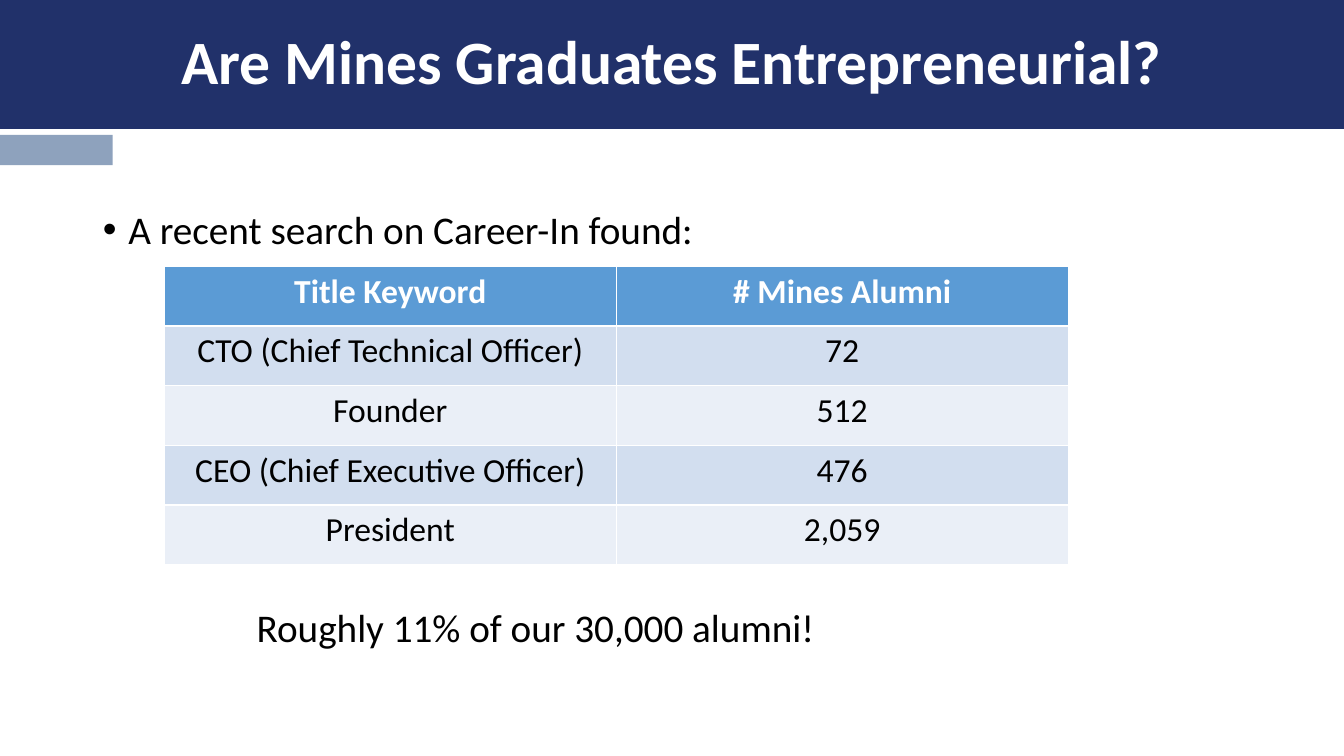
from pptx import Presentation
from pptx.dml.color import RGBColor
from pptx.enum.shapes import MSO_SHAPE
from pptx.enum.text import MSO_ANCHOR, MSO_AUTO_SIZE, PP_ALIGN
from pptx.oxml import parse_xml
from pptx.oxml.ns import nsdecls
from pptx.util import Cm, Pt

NAVY, STEEL, BLUE = "21316A", "8EA2BD", "5B9BD5"
BANDS = ("D2DEEF", "EAEFF7")
WHITE, BLACK = "FFFFFF", "000000"
ALUMNI_ROWS = [
    ("Title Keyword", "# Mines Alumni"),
    ("CTO (Chief Technical Officer)", "72"),
    ("Founder", "512"),
    ("CEO (Chief Executive Officer)", "476"),
    ("President", "2,059"),
]


def paint(fill, color):
    """Give a fill a solid colour from a hex string."""
    fill.solid()
    fill.fore_color.rgb = RGBColor.from_string(color)


def place(shape, left, top, width, height):
    """Move and size a shape, in centimetres."""
    shape.left, shape.top = Cm(left), Cm(top)
    shape.width, shape.height = Cm(width), Cm(height)


def write(frame, text, size=28, color=BLACK, bold=False,
          align=PP_ALIGN.LEFT, spacing=1.0, bullet=False):
    """Write one formatted paragraph into a text frame."""
    para = frame.paragraphs[0]
    para.alignment = align
    para.line_spacing = spacing
    para.space_before = Pt(0)
    if bullet:
        properties = para._p.get_or_add_pPr()
        properties.set("marL", str(Cm(0.64)))
        properties.set("indent", str(Cm(-0.64)))
        properties.append(parse_xml(f'<a:buFont {nsdecls("a")} typeface="Arial"/>'))
        properties.append(parse_xml(f'<a:buChar {nsdecls("a")} char="•"/>'))
    span = para.add_run()
    span.text = text
    span.font.name = "Calibri"
    span.font.size = Pt(size)
    span.font.bold = bold
    span.font.color.rgb = RGBColor.from_string(color)


def add_title(page, text):
    """Turn the title placeholder into a full-width banner."""
    title = page.shapes.title
    place(title, 0, 0, 33.87, 3.25)
    paint(title.fill, NAVY)
    title.text_frame.vertical_anchor = MSO_ANCHOR.MIDDLE
    title.text_frame.auto_size = MSO_AUTO_SIZE.NONE
    write(title.text_frame, text, size=44, color=WHITE, bold=True,
          align=PP_ALIGN.CENTER, spacing=0.9)


def add_body(page, text):
    """Fill the body placeholder with one bullet."""
    body = page.placeholders[1]
    place(body, 2.34, 5.18, 29.21, 12.09)
    body.text_frame.auto_size = MSO_AUTO_SIZE.NONE
    write(body.text_frame, text, spacing=0.9, bullet=True)


def add_accent_bar(page):
    """Draw the short bar under the banner."""
    bar = page.shapes.add_shape(MSO_SHAPE.RECTANGLE, Cm(0), Cm(3.4), Cm(2.84), Cm(0.76))
    bar.shadow.inherit = False
    paint(bar.fill, STEEL)
    bar.line.fill.background()


def add_alumni_table(page, rows):
    """Draw a table with a header row and banded rows."""
    table = page.shapes.add_table(len(rows), len(rows[0]), Cm(4.14), Cm(6.71),
                                  Cm(22.78), Cm(7.52)).table
    for row_index, row in enumerate(rows):
        header = row_index == 0
        for column_index, text in enumerate(row):
            cell = table.cell(row_index, column_index)
            paint(cell.fill, BLUE if header else BANDS[(row_index - 1) % 2])
            write(cell.text_frame, text, size=24, color=WHITE if header else BLACK,
                  bold=header, align=PP_ALIGN.CENTER)


def add_note(page, text):
    """Add the closing remark below the table."""
    box = page.shapes.add_textbox(Cm(6.22), Cm(15.09), Cm(18.64), Cm(1.45))
    box.text_frame.word_wrap = True
    write(box.text_frame, text)


def main():
    """Build and save the slide."""
    deck = Presentation()
    deck.slide_width, deck.slide_height = Cm(33.87), Cm(19.05)
    page = deck.slides.add_slide(deck.slide_layouts[1])
    add_title(page, "Are Mines Graduates Entrepreneurial?")
    add_accent_bar(page)
    add_body(page, "A recent search on Career-In found:")
    add_alumni_table(page, ALUMNI_ROWS)
    add_note(page, "Roughly 11% of our 30,000 alumni!")
    deck.save("out.pptx")


if __name__ == "__main__":
    main()
